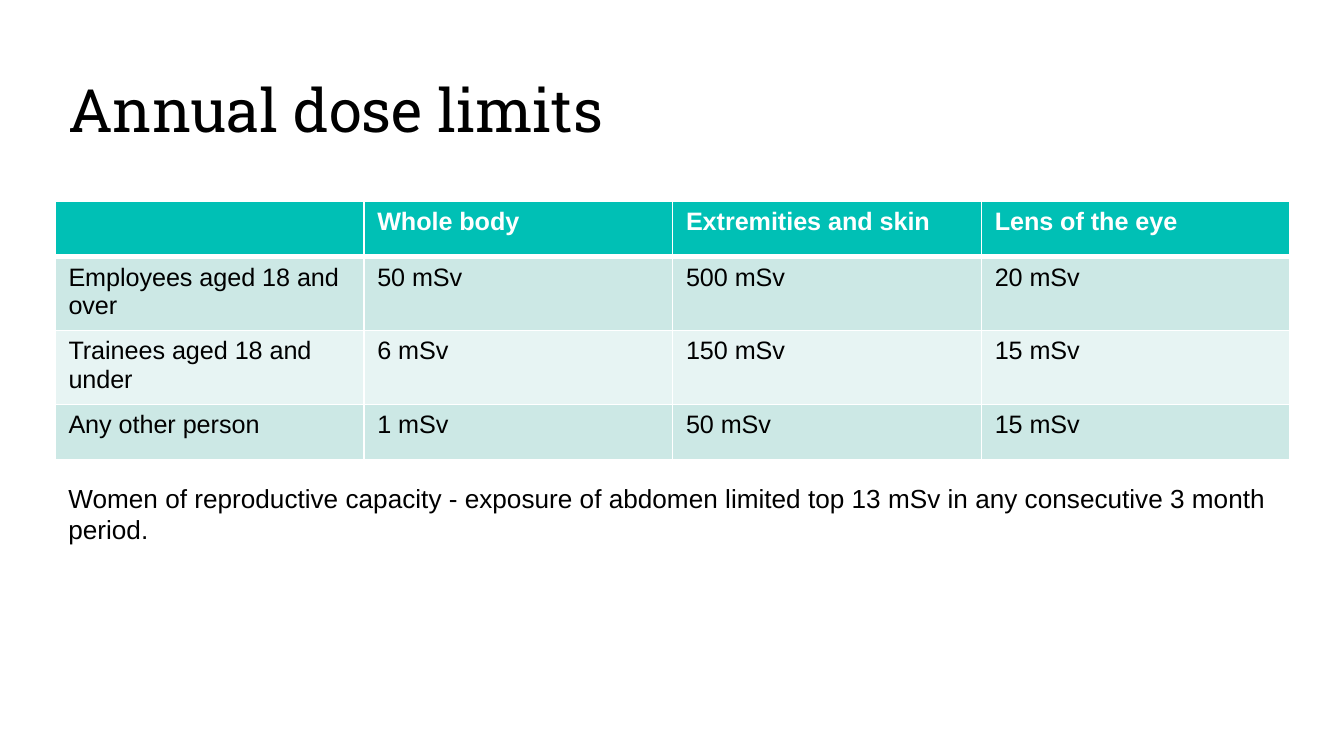
from lxml import etree
from pptx import Presentation
from pptx.dml.color import RGBColor
from pptx.enum.text import MSO_ANCHOR
from pptx.oxml.ns import qn
from pptx.util import Pt

PX = 4572  # EMU in one px, 200 px to the inch
MIDDLE = MSO_ANCHOR.MIDDLE
TOP = MSO_ANCHOR.TOP

BLACK, WHITE, TEAL = "000000", "FFFFFF", "00C0B5"
BANDS = ["CCE8E5", "E7F4F3"]
LEFT, WIDTH = 82, 1838
ROW_HEIGHT = 82
DOSE_LIMITS = [
    ["", "Whole body", "Extremities and skin", "Lens of the eye"],
    ["Employees aged 18 and over", "50 mSv", "500 mSv", "20 mSv"],
    ["Trainees aged 18 and under", "6 mSv", "150 mSv", "15 mSv"],
    ["Any other person", "1 mSv", "50 mSv", "15 mSv"],
]
NOTE = ("Women of reproductive capacity - exposure of abdomen limited top "
        "13 mSv in any consecutive 3 month period.")


def color(value):
    return RGBColor.from_string(value)


def emu(box):
    return [length * PX for length in box]


def style(para, size, ink, name="Arial", bold=False):
    font = para.font
    font.size, font.name, font.bold = Pt(size), name, bold
    font.color.rgb = color(ink)


def add_text(page, box, text, size, name, anchor, spacing):
    frame = page.shapes.add_textbox(*emu(box)).text_frame
    frame.word_wrap = True
    frame.vertical_anchor = anchor
    para = frame.paragraphs[0]
    para.text = text
    para.line_spacing = spacing
    style(para, size, BLACK, name)


def set_borders(cell, bottom):
    """Draw white cell edges; they must come before the fill in the XML."""
    props = cell._tc.get_or_add_tcPr()
    widths = {"a:lnL": 1, "a:lnR": 1, "a:lnT": 1, "a:lnB": bottom}
    for tag, width in widths.items():
        line = etree.SubElement(props, qn(tag), w=str(Pt(width)))
        fill = etree.SubElement(line, qn("a:solidFill"))
        etree.SubElement(fill, qn("a:srgbClr"), val=WHITE)


def add_dose_table(page, box):
    rows, columns = len(DOSE_LIMITS), len(DOSE_LIMITS[0])
    table = page.shapes.add_table(rows, columns, *emu(box)).table
    for r, values in enumerate(DOSE_LIMITS):
        header = r == 0
        for c, value in enumerate(values):
            cell = table.cell(r, c)
            set_borders(cell, 3 if header else 1)
            cell.fill.solid()
            cell.fill.fore_color.rgb = color(TEAL if header else BANDS[(r - 1) % 2])
            para = cell.text_frame.paragraphs[0]
            para.text = value
            style(para, 13.5, WHITE if header else BLACK, bold=header)


def build_dose_slide(deck):
    page = deck.slides.add_slide(deck.slide_layouts[6])
    # Title
    add_text(page, (LEFT, 60, WIDTH, 218), "Annual dose limits", 32,
             "Roboto Slab", MIDDLE, 0.9)
    # Limits by group and body part
    add_dose_table(page, (LEFT, 300, WIDTH, ROW_HEIGHT * len(DOSE_LIMITS)))
    # Note under the table
    add_text(page, (LEFT, 708, WIDTH, 164), NOTE, 14, "Arial", TOP, 1.0)


def main():
    deck = Presentation()
    deck.slide_width, deck.slide_height = emu((2000, 1125))
    build_dose_slide(deck)
    deck.save("out.pptx")


if __name__ == "__main__":
    main()
